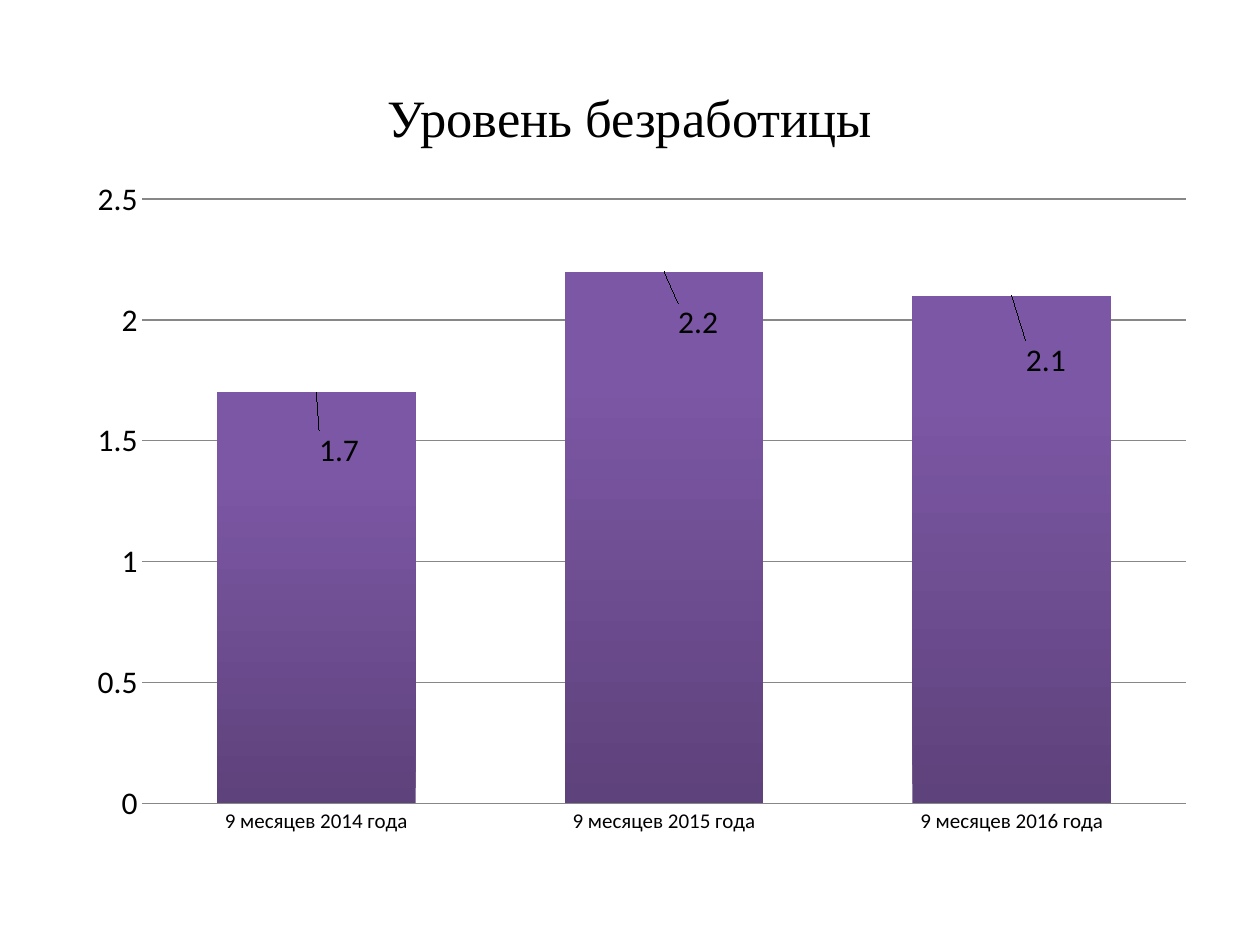
"""Build a slide with a column chart of the unemployment rate."""
import pptx
import pptx.util
import pptx.chart.data
import pptx.dml.color
import pptx.enum.chart
import pptx.enum.text
import pptx.oxml
import pptx.oxml.ns

TITLE = "Уровень безработицы"
RATES = [
    ("9 месяцев 2014 года", 1.7, (0.02, 0.12)),
    ("9 месяцев 2015 года", 2.2, (0.03, 0.11)),
    ("9 месяцев 2016 года", 2.1, (0.03, 0.13)),
]
PLOT = {"x": 0.06, "y": 0.05, "w": 0.92, "h": 0.89}
THEME = {
    "head": "Times New Roman", "body": "Calibri",
    "big": 30, "mid": 18, "small": 12,
    "ink": "000000", "grid": "878787", "dark": "5E427B", "light": "7C57A5",
}
Cm = pptx.util.Cm
Pt = pptx.util.Pt


def tint(name):
    return pptx.dml.color.RGBColor.from_string(THEME[name])


def style(font, face="body", size="mid", color="ink"):
    font.name = THEME[face]
    font.size = Pt(THEME[size])
    font.bold = False
    font.color.rgb = tint(color)


def write(frame, text, align=pptx.enum.text.PP_ALIGN.CENTER, **form):
    frame.text = text
    frame.word_wrap = True
    frame.vertical_anchor = pptx.enum.text.MSO_ANCHOR.MIDDLE
    line = frame.paragraphs[0]
    line.alignment = align
    style(line.runs[0].font, **form)


def layout(spots, inner=False):
    parts = '<c:layoutTarget val="inner"/>' if inner else ""
    if inner:
        parts += '<c:xMode val="edge"/><c:yMode val="edge"/>'
    parts += "".join(f'<c:{key} val="{val}"/>' for key, val in spots.items())
    space = pptx.oxml.ns.nsdecls("c")
    return pptx.oxml.parse_xml(
        f"<c:layout {space}><c:manualLayout>{parts}</c:manualLayout></c:layout>")


def add_rates(slide):
    enum = pptx.enum.chart
    data = pptx.chart.data.CategoryChartData()
    data.categories = [name for name, rate, shift in RATES]
    data.add_series("Series 1", [rate for name, rate, shift in RATES])
    chart = slide.shapes.add_chart(
        enum.XL_CHART_TYPE.COLUMN_CLUSTERED,
        Cm(1.5), Cm(3.33), Cm(22.86), Cm(13.69), data).chart
    chart.has_legend = False
    chart.has_title = False
    style(chart.font)

    for axis in (chart.category_axis, chart.value_axis):
        axis.major_tick_mark = enum.XL_TICK_MARK.NONE
        axis.format.line.color.rgb = tint("grid")
    style(chart.category_axis.tick_labels.font, size="small")
    scale = chart.value_axis
    scale.minimum_scale, scale.maximum_scale, scale.major_unit = 0, 2.5, 0.5
    scale.format.line.fill.background()
    scale.major_gridlines.format.line.color.rgb = tint("grid")
    scale.tick_labels.number_format = "General"
    scale.tick_labels.number_format_is_linked = False

    plot = chart.plots[0]
    plot.gap_width = 75
    plot.vary_by_categories = False
    bars = plot.series[0]
    fill = bars.format.fill
    fill.gradient()
    fill.gradient_angle = 90
    for stop, place, name in zip(fill.gradient_stops, (0, 0.8), ("dark", "light")):
        stop.position = place
        stop.color.rgb = tint(name)

    for spot in range(len(RATES)):
        label = bars.points[spot].data_label
        label.position = enum.XL_LABEL_POSITION.OUTSIDE_END
        style(label.font)
    labels = chart.element.xpath(".//c:dLbl")
    for label, (name, rate, (right, down)) in zip(labels, RATES):
        label.insert(1, layout({"x": right, "y": down}))
    area = chart.element.xpath(".//c:plotArea")[0]
    for old in area.xpath("./c:layout"):
        area.remove(old)
    area.insert(0, layout(PLOT, inner=True))


def main():
    deck = pptx.Presentation()
    deck.slide_width, deck.slide_height = Cm(25.4), Cm(19.05)
    slide = deck.slides.add_slide(deck.slide_layouts[5])
    title = slide.shapes.title
    title.left, title.top = Cm(1.27), Cm(0.76)
    title.width, title.height = Cm(22.86), Cm(3.18)
    write(title.text_frame, TITLE, face="head", size="big")
    add_rates(slide)
    deck.save("out.pptx")


if __name__ == "__main__":
    main()
